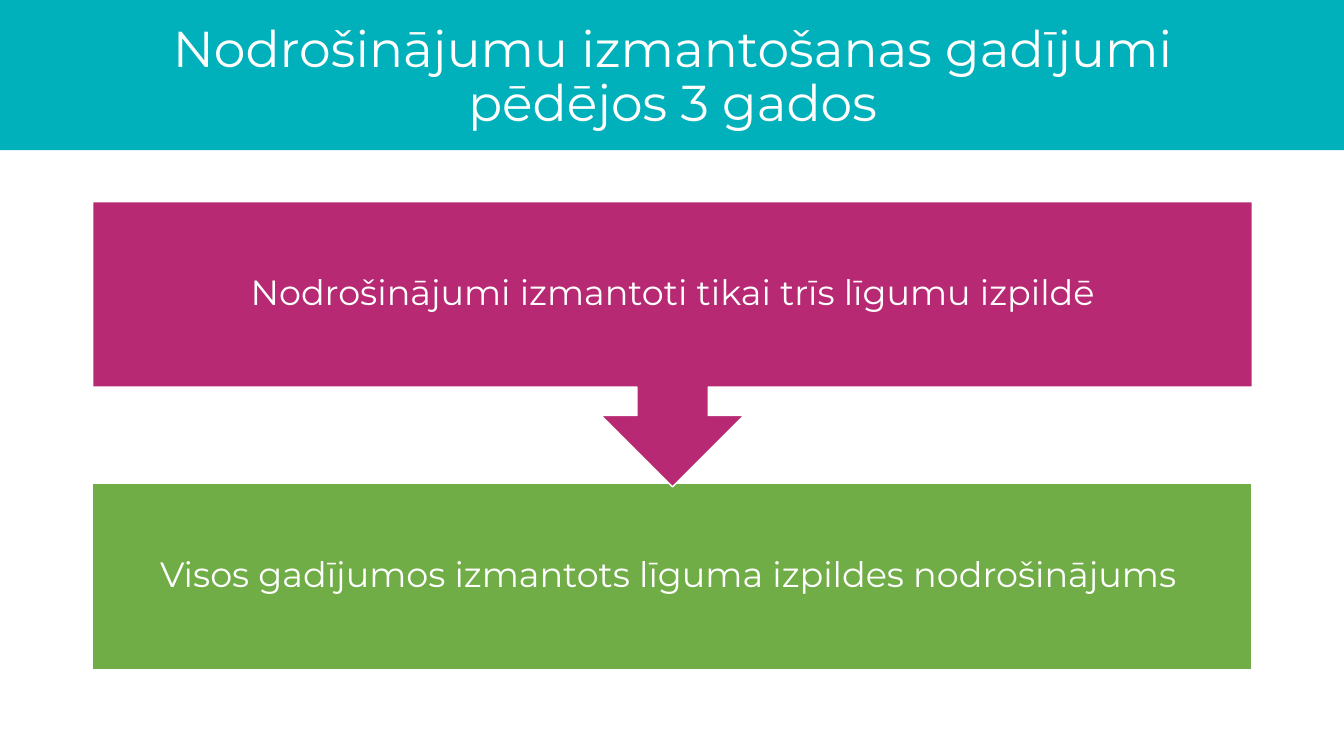
from pptx import Presentation
from pptx.dml.color import RGBColor
from pptx.enum.shapes import MSO_SHAPE
from pptx.enum.text import MSO_ANCHOR, PP_ALIGN
from pptx.util import Inches, Pt

RECTANGLE = MSO_SHAPE.RECTANGLE
ARROW_CALLOUT = MSO_SHAPE.UP_ARROW_CALLOUT
MIDDLE = MSO_ANCHOR.MIDDLE
CENTER = PP_ALIGN.CENTER

COLORS = {
    "teal": "00B0BA",
    "magenta": "B72973",
    "green": "70AD47",
    "white": "FFFFFF",
}
FONT = "Montserrat"
TITLE_ONLY_LAYOUT = 5

SLIDE_WIDTH, SLIDE_HEIGHT = 13.33, 7.5
BOX_LEFT, BOX_WIDTH, BOX_HEIGHT = 0.92, 11.5, 1.84
CALLOUT_TOP, CALLOUT_HEIGHT = 2, 2.83
RESULT_TOP = 4.8


def color(name):
    return RGBColor.from_string(COLORS[name])


def add_block(slide, kind, left, top, width, height, fill, outline=None):
    shape = slide.shapes.add_shape(
        kind, Inches(left), Inches(top), Inches(width), Inches(height))
    shape.shadow.inherit = False
    shape.fill.solid()
    shape.fill.fore_color.rgb = color(fill)
    if outline:
        shape.line.color.rgb = color(outline)
        shape.line.width = Pt(1)
    else:
        shape.line.fill.background()
    return shape


def write_text(shape, text, size, margin=None):
    frame = shape.text_frame
    frame.word_wrap = True
    frame.vertical_anchor = MIDDLE
    if margin is not None:
        frame.margin_left = frame.margin_right = Inches(margin)
        frame.margin_top = frame.margin_bottom = Inches(margin)
    frame.text = text
    paragraph = frame.paragraphs[0]
    paragraph.alignment = CENTER
    paragraph.line_spacing = 0.9
    font = paragraph.runs[0].font
    font.name = FONT
    font.size = Pt(size)
    font.color.rgb = color("white")


def add_title(slide, text):
    title = slide.shapes.title
    title.left, title.top = Inches(BOX_LEFT), Inches(0.05)
    title.width, title.height = Inches(BOX_WIDTH), Inches(1.45)
    write_text(title, text, size=36)
    # The band lies behind the title
    band = add_block(slide, RECTANGLE, 0, -0.02, SLIDE_WIDTH, 1.51, "teal")
    title.element.addprevious(band.element)


def add_result(slide, text):
    box = add_block(slide, RECTANGLE, BOX_LEFT, RESULT_TOP, BOX_WIDTH,
                    BOX_HEIGHT, "green", outline="white")
    write_text(box, text, size=25, margin=0.19)


def add_callout(slide, text):
    callout = add_block(slide, ARROW_CALLOUT, BOX_LEFT, CALLOUT_TOP, BOX_WIDTH,
                        CALLOUT_HEIGHT, "magenta", outline="white")
    callout.rotation = 180
    # Upright label over the turned callout
    label = slide.shapes.add_textbox(
        Inches(BOX_LEFT), Inches(CALLOUT_TOP),
        Inches(BOX_WIDTH), Inches(BOX_HEIGHT))
    write_text(label, text, size=25, margin=0.19)


def main():
    presentation = Presentation()
    presentation.slide_width = Inches(SLIDE_WIDTH)
    presentation.slide_height = Inches(SLIDE_HEIGHT)
    layout = presentation.slide_layouts[TITLE_ONLY_LAYOUT]
    slide = presentation.slides.add_slide(layout)

    # Heading
    add_title(slide, "Nodrošinājumu izmantošanas gadījumi pēdējos 3 gados")

    # Flow: the callout's arrow tip overlaps the result box
    add_result(slide, "Visos gadījumos izmantots līguma izpildes nodrošinājums ")
    add_callout(slide, "Nodrošinājumi izmantoti tikai trīs līgumu izpildē")

    presentation.save("out.pptx")


if __name__ == "__main__":
    main()
